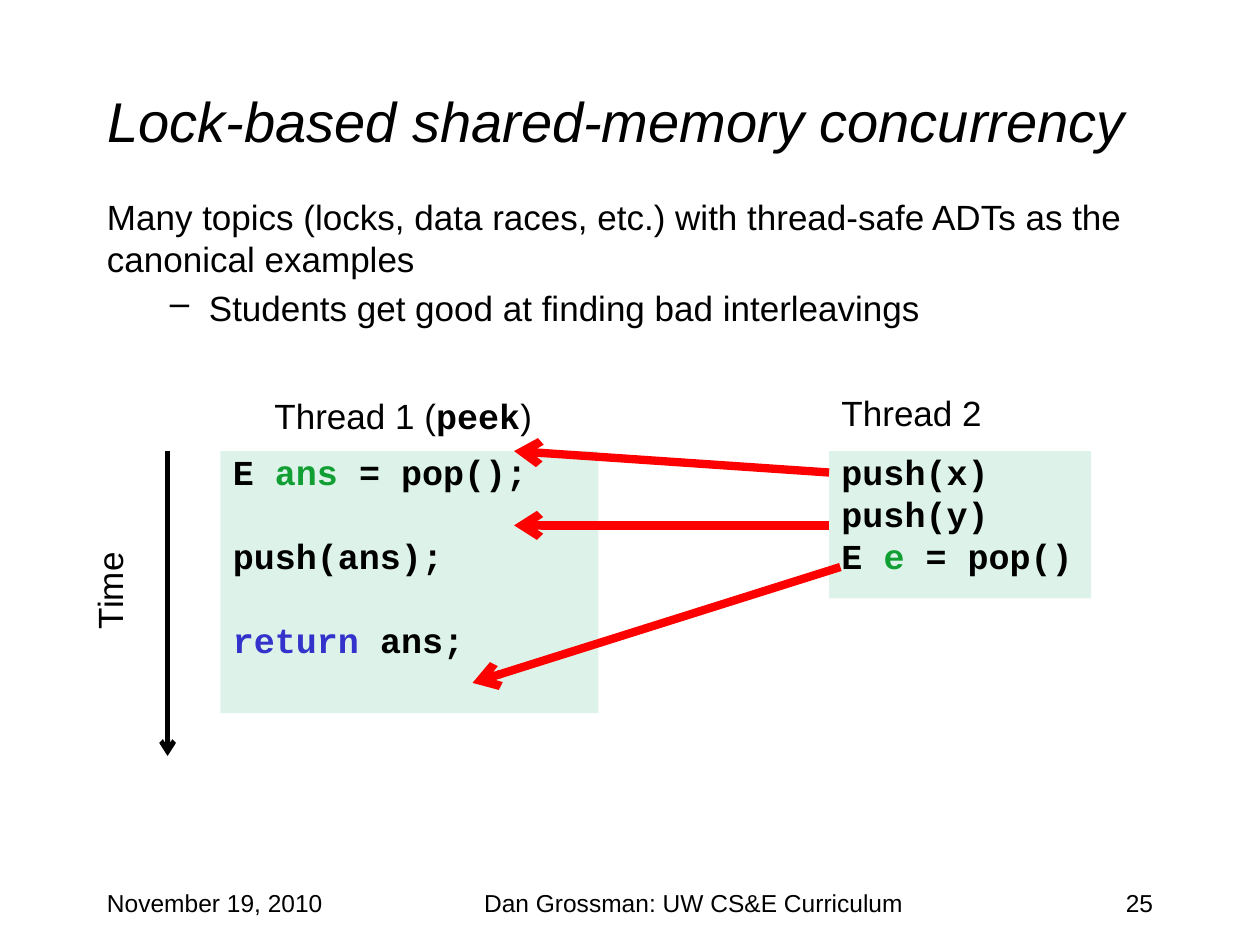
"""Build the slide on lock-based shared-memory concurrency."""
from lxml import etree
from pptx import Presentation
from pptx.dml.color import RGBColor
from pptx.enum.shapes import MSO_CONNECTOR, MSO_SHAPE
from pptx.enum.text import MSO_ANCHOR, MSO_AUTO_SIZE, PP_ALIGN
from pptx.oxml.ns import qn
from pptx.util import Inches, Pt

STRAIGHT = MSO_CONNECTOR.STRAIGHT
RECTANGLE = MSO_SHAPE.RECTANGLE
TOP, MIDDLE = MSO_ANCHOR.TOP, MSO_ANCHOR.MIDDLE
LEFT, CENTER, RIGHT = PP_ALIGN.LEFT, PP_ALIGN.CENTER, PP_ALIGN.RIGHT
NO_AUTOFIT = MSO_AUTO_SIZE.NONE

BLACK = RGBColor(0x00, 0x00, 0x00)
RED = RGBColor(0xFF, 0x00, 0x00)
GREEN = RGBColor(0x11, 0x9F, 0x33)
BLUE = RGBColor(0x33, 0x33, 0xCC)
MINT = RGBColor(0xDD, 0xF3, 0xEA)
SANS, MONO = "Arial", "Courier New"


def style(para, size, name=SANS, align=LEFT):
    para.alignment = align
    para.font.size = Pt(size)
    para.font.name = name
    para.font.color.rgb = BLACK


def add_text(page, area, text, size=20, align=LEFT, wrap=True):
    box = page.shapes.add_textbox(*map(Inches, area))
    box.text_frame.word_wrap = wrap
    para = box.text_frame.paragraphs[0]
    para.text = text
    style(para, size, align=align)
    return box


deck = Presentation()
deck.slide_width, deck.slide_height = Inches(10), Inches(7.5)
page = deck.slides.add_slide(deck.slide_layouts[5])

title = page.shapes.title
title.left, title.top = Inches(0.75), Inches(0.33)
title.width, title.height = Inches(8.5), Inches(1.25)
title.text_frame.text = "Lock-based shared-memory concurrency"
title.text_frame.vertical_anchor = MIDDLE
title.text_frame.auto_size = NO_AUTOFIT
style(title.text_frame.paragraphs[0], 32)
title.text_frame.paragraphs[0].font.italic = True

body = add_text(
    page, (0.75, 1.5, 8.5, 1.33),
    "Many topics (locks, data races, etc.) with thread-safe ADTs as the canonical examples",
)
body.text_frame.paragraphs[0].space_before = Pt(4)
para = body.text_frame.add_paragraph()
para.text = "Students get good at finding bad interleavings"
style(para, 20)
para.level = 1
para.space_before = Pt(4)
properties = para._p.get_or_add_pPr()
properties.set("marL", str(Inches(0.81)))
properties.set("indent", str(Inches(-0.31)))
bullet = etree.Element(qn("a:buChar"), char="–")
properties.find(qn("a:spcBef")).addnext(bullet)

add_text(page, (0.75, 7, 2.08, 0.5), "November 19, 2010", 14)
add_text(page, (3.17, 7, 4.67, 0.5), "Dan Grossman: UW CS&E Curriculum", 14, CENTER)
add_text(page, (7.17, 7, 2.08, 0.5), "25", 14, RIGHT)

code_blocks = [
    ((1.75, 3.58, 3, 2.08), 28, [
        [("E ", BLACK), ("ans", GREEN), (" = pop();", BLACK)],
        [("push(ans);", BLACK)],
        [("return ", BLUE), ("ans;", BLACK)],
    ]),
    ((6.58, 3.58, 2.08, 1.17), 4, [
        [("push(x)", BLACK)],
        [("push(y)", BLACK)],
        [("E ", BLACK), ("e", GREEN), (" = pop()", BLACK)],
    ]),
]
for area, gap, lines in code_blocks:
    box = page.shapes.add_shape(RECTANGLE, *map(Inches, area))
    box.shadow.inherit = False
    box.fill.solid()
    box.fill.fore_color.rgb = MINT
    box.line.fill.background()
    frame = box.text_frame
    frame.vertical_anchor = TOP
    for index, line in enumerate(lines):
        para = frame.add_paragraph() if index else frame.paragraphs[0]
        style(para, 20, MONO)
        para.font.bold = True
        para.line_spacing = Pt(20)
        para.space_before = Pt(gap if index else 4)
        for text, color in line:
            span = para.add_run()
            span.text = text
            span.font.color.rgb = color

time_label = add_text(page, (0.46, 4.46, 0.82, 0.44), "Time", wrap=False)
time_label.rotation = 270
add_text(page, (6.58, 3.06, 1.32, 0.44), "Thread 2", wrap=False)
thread_label = add_text(page, (2.08, 3.08, 2.26, 0.44), "Thread 1 (", wrap=False)
para = thread_label.text_frame.paragraphs[0]
span = para.add_run()
span.text = "peek"
span.font.name = MONO
span.font.bold = True
para.add_run().text = ")"

arrows = [
    ((1.33, 3.58), (1.33, 6), BLACK, 2.75),
    ((6.58, 4.17), (4.08, 4.17), RED, 4.75),
    ((6.58, 3.75), (4.08, 3.58), RED, 4.75),
    ((6.67, 4.5), (3.75, 5.42), RED, 4.75),
]
for start, end, color, width in arrows:
    arrow = page.shapes.add_connector(STRAIGHT, *map(Inches, start + end))
    arrow.line.color.rgb = color
    arrow.line.width = Pt(width)
    etree.SubElement(arrow.line._get_or_add_ln(), qn("a:tailEnd"), type="arrow")
    etree.SubElement(arrow._element.spPr, qn("a:effectLst"))

deck.save("out.pptx")
